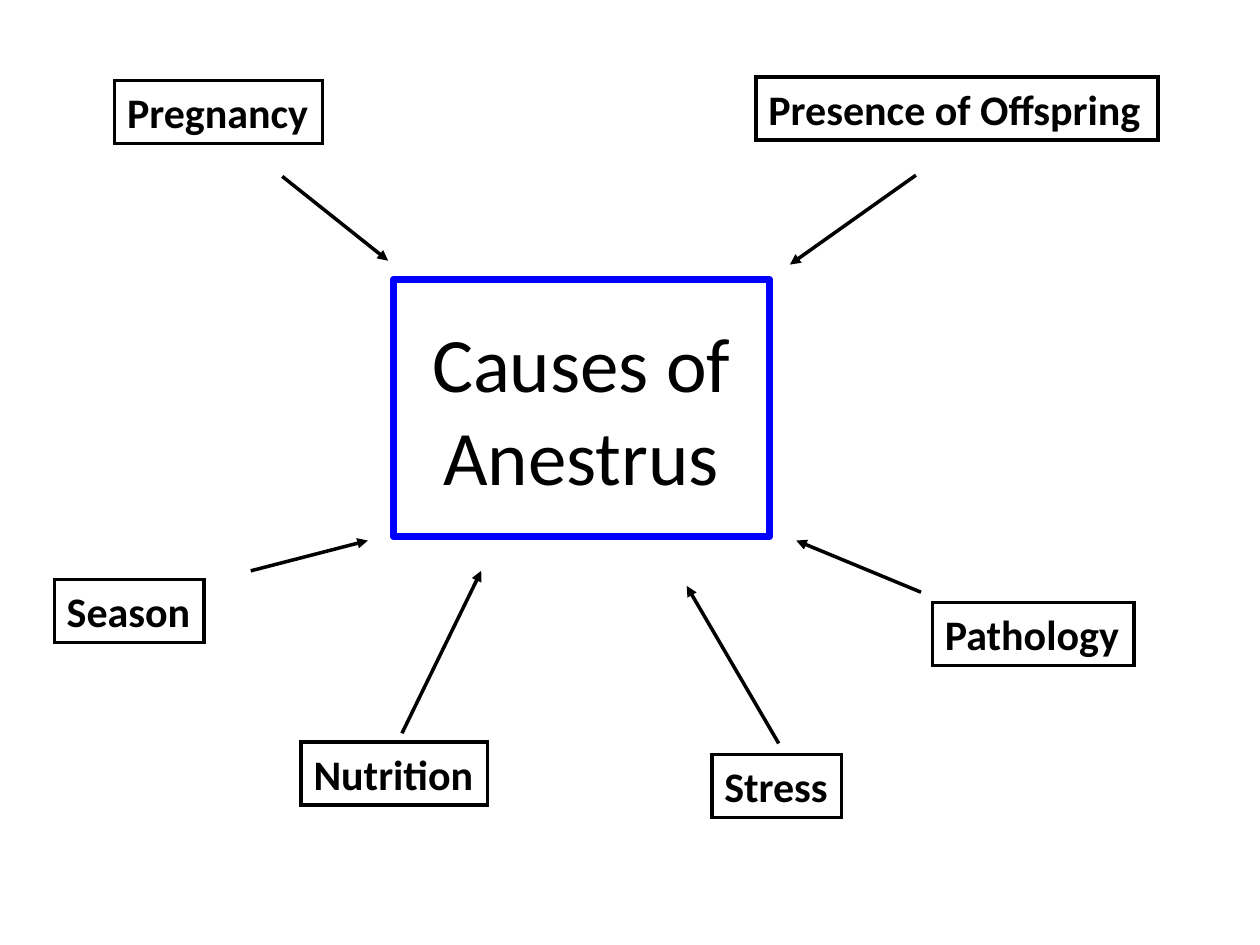
from lxml.etree import SubElement
from pptx import Presentation
from pptx.dml.color import RGBColor
from pptx.enum.shapes import MSO_CONNECTOR
from pptx.enum.text import MSO_ANCHOR, MSO_AUTO_SIZE, PP_ALIGN
from pptx.oxml.ns import qn
from pptx.util import Pt

COLORS = {"ink": "000000", "frame": "0000FF"}
FONT = "Calibri"

# text, box (left, top, width), arrow (from x, y, to x, y)
CAUSES = [
    ("Pregnancy", (65.5, 46.1, 118.8), (161.3, 100.8, 221.8, 149)),
    ("Presence of Offspring", (432, 43.9, 229.7), (523.4, 100.1, 451.4, 151.2)),
    ("Season", (31, 331.2, 85.7), (143.3, 326.2, 210.2, 308.9)),
    ("Stress", (406.8, 431.3, 74.2), (445, 424.8, 392.4, 334.8)),
    ("Pathology", (532.8, 344.2, 115.2), (526.3, 338.4, 455, 308.9)),
    ("Nutrition", (172.1, 424.1, 106.6), (229.7, 419, 275, 326.2)),
]
LABEL_HEIGHT = 36


def assign(item, values):
    for name, value in values.items():
        setattr(item, name, value)


class Sketch:
    """Holds the style and the slide being drawn."""

    def __init__(self, slide):
        self.slide = slide
        self.title = {"size": Pt(44), "bold": False, "name": FONT}
        self.label = {"size": Pt(24), "bold": True, "name": FONT}

    def stroke(self, line, color, width, join):
        line.color.rgb = RGBColor.from_string(COLORS[color])
        line.width = Pt(width)
        SubElement(line._get_or_add_ln(), qn("a:" + join))

    def add_text(self, text, box, font, frame, align):
        shape = self.slide.shapes.add_textbox(*map(Pt, box))
        assign(shape.text_frame, frame)
        par = shape.text_frame.paragraphs[0]
        par.alignment = align
        run = par.add_run()
        run.text = text
        assign(run.font, font)
        run.font.color.rgb = RGBColor.from_string(COLORS["ink"])
        return shape

    def add_title(self, text, box):
        frame = {"word_wrap": True, "vertical_anchor": MSO_ANCHOR.MIDDLE}
        shape = self.add_text(text, box, self.title, frame, PP_ALIGN.CENTER)
        self.stroke(shape.line, "frame", 4, "round")

    def add_label(self, text, box):
        frame = {"word_wrap": False, "auto_size": MSO_AUTO_SIZE.SHAPE_TO_FIT_TEXT}
        shape = self.add_text(text, box, self.label, frame, PP_ALIGN.LEFT)
        self.stroke(shape.line, "ink", 2, "miter")

    def add_arrow(self, ends):
        arrow = self.slide.shapes.add_connector(MSO_CONNECTOR.STRAIGHT, *map(Pt, ends))
        self.stroke(arrow.line, "ink", 2, "round")
        SubElement(arrow.line._get_or_add_ln(), qn("a:tailEnd"), type="triangle")
        SubElement(arrow._element.spPr, qn("a:effectLst"))


def main():
    deck = Presentation()
    assign(deck, {"slide_width": Pt(720), "slide_height": Pt(540)})
    sketch = Sketch(deck.slides.add_slide(deck.slide_layouts[6]))
    sketch.add_title("Causes of Anestrus", (224.6, 159.8, 215.3, 146.9))
    for text, box, ends in CAUSES:
        sketch.add_label(text, (*box, LABEL_HEIGHT))
        sketch.add_arrow(ends)
    deck.save("out.pptx")


if __name__ == "__main__":
    main()
